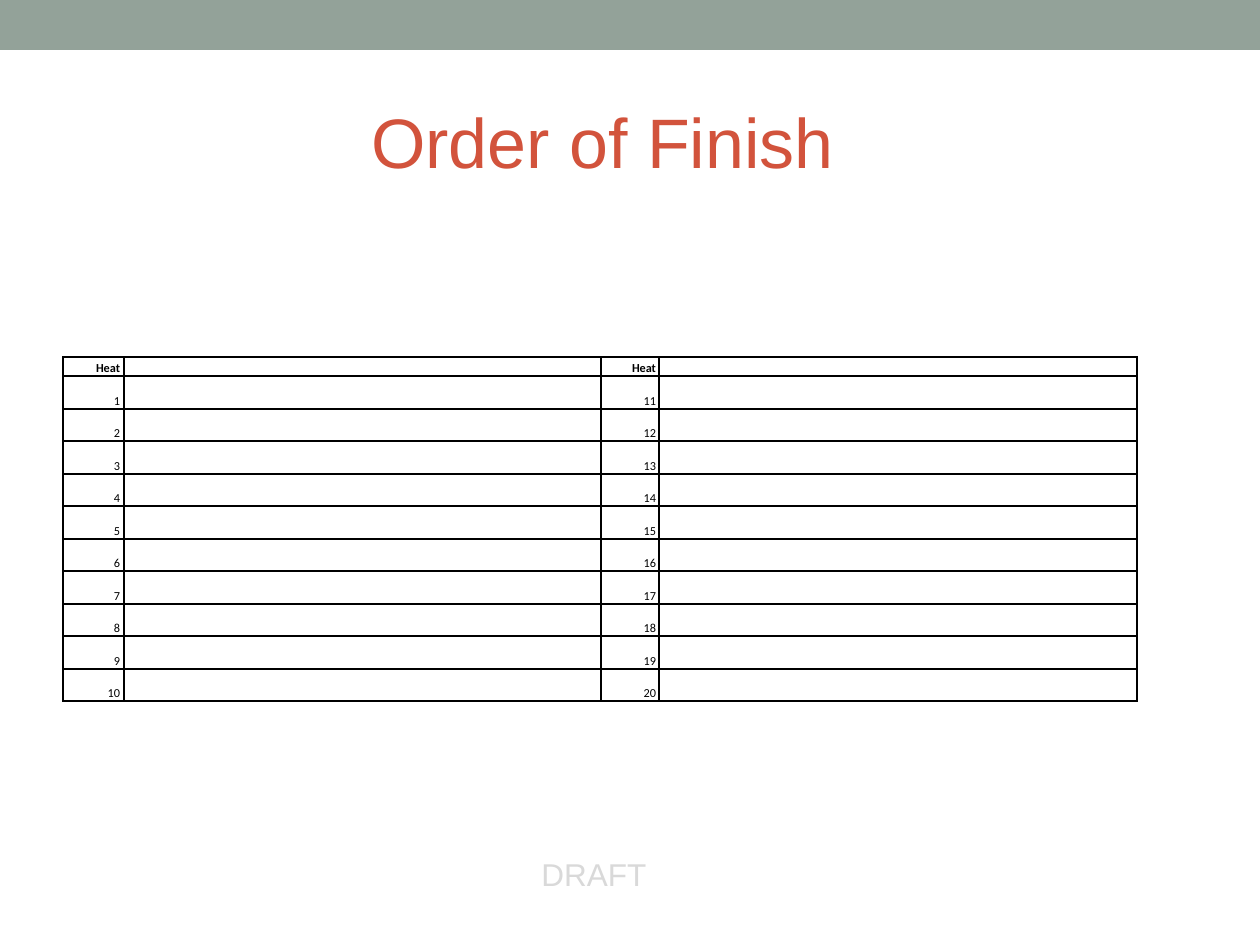
from lxml.etree import SubElement
from pptx import Presentation
from pptx.dml.color import RGBColor
from pptx.enum.shapes import MSO_SHAPE as Shape
from pptx.enum.text import MSO_ANCHOR as Anchor, PP_ALIGN as Align
from pptx.oxml.ns import qn
from pptx.util import Emu, Pt

EMU_PER_PX = 914400 / 126
SLIDE_SIZE = (1260, 945)
BLACK = "000000"
WHITE = "FFFFFF"
BORDER_PT = 1.2
HEAT_COUNT = 20
HEATS_PER_COLUMN = HEAT_COUNT // 2
HEADER_HEIGHT = 19
COLUMN_WIDTHS = (61, 477, 58, 478)
HEAT_MARGINS = {0: 4, 2: 3}


def px(length):
    return Emu(round(length * EMU_PER_PX))


def color(value):
    return RGBColor.from_string(value)


def write(frame, text, font="Arial", size=18, fill=BLACK, bold=False,
          align=Align.CENTER, line=None):
    paragraph = frame.paragraphs[0]
    paragraph.alignment = align
    if line:
        paragraph.line_spacing = Pt(line)
    run = paragraph.add_run()
    run.text = text
    run.font.name = font
    run.font.size = Pt(size)
    run.font.bold = bold
    run.font.color.rgb = color(fill)


def add_band(slide, box):
    band = slide.shapes.add_shape(Shape.RECTANGLE, *map(px, box))
    band.shadow.inherit = False
    band.fill.solid()
    band.fill.fore_color.rgb = color("93A299")
    band.line.fill.background()


def add_title(slide, box):
    title = slide.shapes.title
    title.left, title.top, title.width, title.height = map(px, box)
    frame = title.text_frame
    frame.margin_left = frame.margin_right = frame.margin_bottom = 0
    frame.margin_top = px(35)
    frame.vertical_anchor = Anchor.TOP
    write(frame, "Order of Finish", size=40, fill="D2533C")


def add_draft_label(slide, box):
    frame = slide.shapes.add_textbox(*map(px, box)).text_frame
    frame.word_wrap = True
    write(frame, "DRAFT", fill="D9D9D9")


def format_cell(cell):
    cell.margin_left = cell.margin_right = 0
    cell.margin_top = cell.margin_bottom = 0
    properties = cell._tc.get_or_add_tcPr()
    for side in ("lnL", "lnR", "lnT", "lnB"):
        border = SubElement(properties, qn(f"a:{side}"), w=str(Pt(BORDER_PT)))
        fill = SubElement(border, qn("a:solidFill"))
        SubElement(fill, qn("a:srgbClr"), val=BLACK)
    cell.fill.solid()
    cell.fill.fore_color.rgb = color(WHITE)


def fill_heat_cell(cell, row, column):
    cell.margin_right = px(HEAT_MARGINS[column])
    is_header = row == 0
    cell.vertical_anchor = Anchor.MIDDLE if is_header else Anchor.BOTTOM
    heat = row + HEATS_PER_COLUMN * (column // 2)
    write(cell.text_frame, "Heat" if is_header else str(heat), font="Calibri",
          size=7, bold=is_header, align=Align.RIGHT,
          line=11 if is_header else 12)


def add_heat_table(slide, box):
    row_count = HEATS_PER_COLUMN + 1
    table = slide.shapes.add_table(
        row_count, len(COLUMN_WIDTHS), *map(px, box)).table
    table.first_row = table.horz_banding = False
    for column, width in zip(table.columns, COLUMN_WIDTHS):
        column.width = px(width)
    heat_height = (box[3] - HEADER_HEIGHT) / HEATS_PER_COLUMN
    for row in range(row_count):
        table.rows[row].height = px(heat_height if row else HEADER_HEIGHT)
        for column in range(len(COLUMN_WIDTHS)):
            cell = table.cell(row, column)
            format_cell(cell)
            if column in HEAT_MARGINS:
                fill_heat_cell(cell, row, column)
            else:
                paragraph = cell.text_frame.paragraphs[0]
                SubElement(paragraph._p, qn("a:endParaRPr"), sz="700")


def main():
    presentation = Presentation()
    presentation.slide_width, presentation.slide_height = map(px, SLIDE_SIZE)
    slide = presentation.slides.add_slide(presentation.slide_layouts[5])
    add_band(slide, (0, 0, 1260, 50))
    add_draft_label(slide, (221, 849, 746, 50))
    add_heat_table(slide, (63, 357, sum(COLUMN_WIDTHS), 344))
    add_title(slide, (63, 63, 1079, 157))
    presentation.save("out.pptx")


if __name__ == "__main__":
    main()
